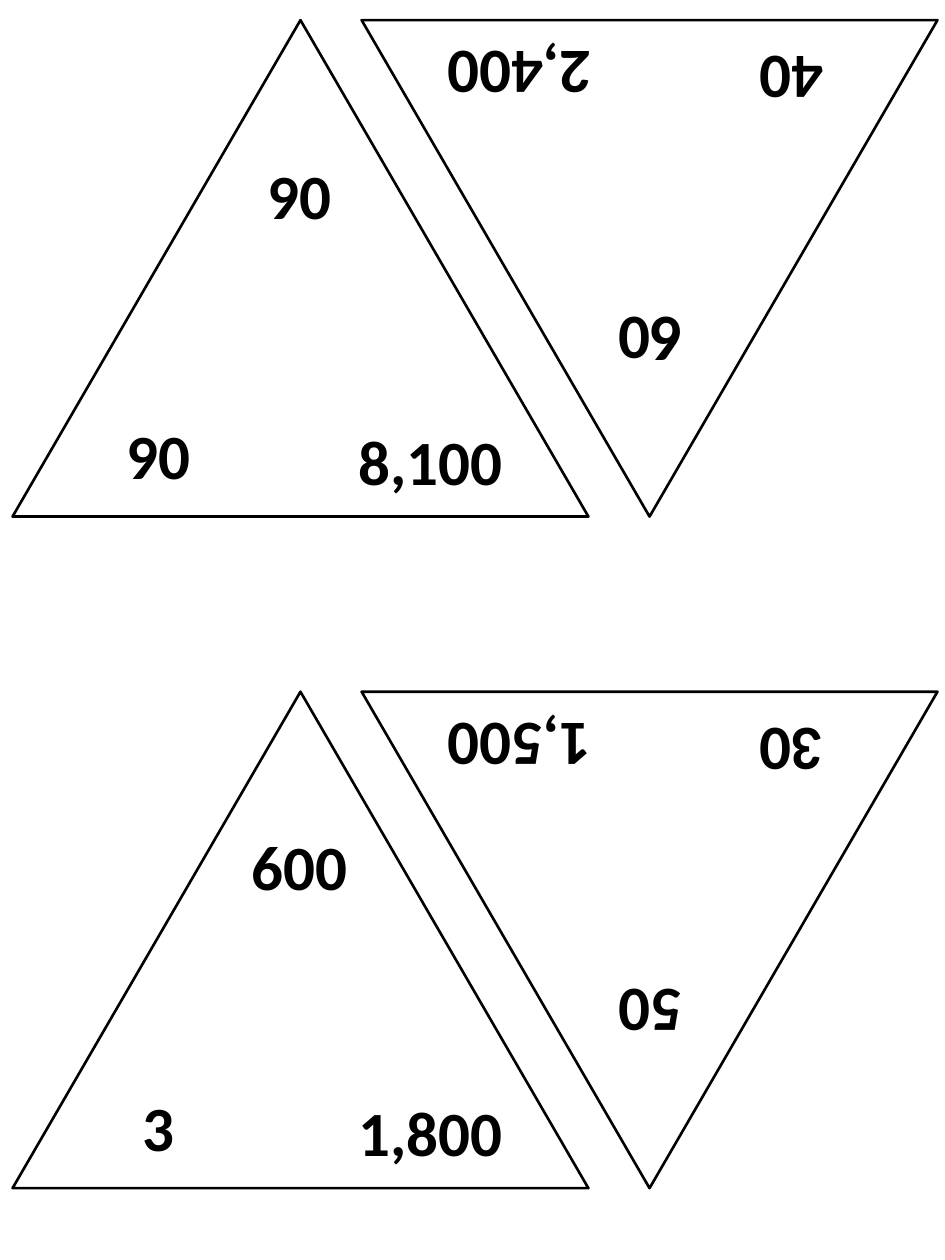
from pptx import Presentation
from pptx.dml.color import RGBColor
from pptx.enum.shapes import MSO_SHAPE as Preset
from pptx.enum.text import MSO_AUTO_SIZE as AutoSize, PP_ALIGN as Align
from pptx.util import Inches, Pt

CARD_WIDTH, CARD_HEIGHT = 4.57, 3.94
LABEL_HEIGHT = 0.71
# Left, top and width of the top, left and right labels within an upright card
LABEL_SLOTS = [(1.65, 1.03, 1.26), (0.49, 3.1, 1.33), (2.57, 3.14, 1.49)]

COLUMNS = [(0.1, 0), (2.87, 180)]  # left edge and rotation
ROWS = [0.16, 5.49]
FACTS = [
    [("90", "90", "8,100"), ("60", "40", "2,400")],
    [("600", "3", "1,800"), ("50", "30", "1,500")],
]


def color(hex_value):
    return RGBColor.from_string(hex_value)


class FactCards:
    ink = "000000"
    paper = "FFFFFF"
    font_format = {"name": "Calibri", "size": Pt(36), "bold": True}

    def __init__(self, slide):
        self.slide = slide

    def triangle(self, group, left, top):
        size = Inches(CARD_WIDTH), Inches(CARD_HEIGHT)
        shape = group.shapes.add_shape(
            Preset.ISOSCELES_TRIANGLE, Inches(left), Inches(top), *size)
        shape.shadow.inherit = False
        shape.fill.solid()
        shape.fill.fore_color.rgb = color(self.paper)
        shape.line.color.rgb = color(self.ink)
        shape.line.width = Pt(1.5)

    def label(self, group, text, left, top, width):
        box = group.shapes.add_textbox(
            Inches(left), Inches(top), Inches(width), Inches(LABEL_HEIGHT))
        frame = box.text_frame
        frame.word_wrap = True
        frame.auto_size = AutoSize.SHAPE_TO_FIT_TEXT
        paragraph = frame.paragraphs[0]
        paragraph.alignment = Align.CENTER
        run = paragraph.add_run()
        run.text = text
        for name, value in self.font_format.items():
            setattr(run.font, name, value)
        run.font.color.rgb = color(self.ink)

    def card(self, numbers, left, top, rotation):
        """Build an upright card as a group, then turn the whole group."""
        group = self.slide.shapes.add_group_shape()
        self.triangle(group, left, top)
        for number, (x, y, width) in zip(numbers, LABEL_SLOTS):
            self.label(group, number, left + x, top + y, width)
        group.rotation = rotation


def main():
    presentation = Presentation()
    presentation.slide_width = Inches(7.5)
    presentation.slide_height = Inches(10)
    slide = presentation.slides.add_slide(presentation.slide_layouts[6])
    cards = FactCards(slide)
    for top, row in zip(ROWS, FACTS):
        for (left, rotation), numbers in zip(COLUMNS, row):
            cards.card(numbers, left, top, rotation)
    presentation.save("out.pptx")


if __name__ == "__main__":
    main()
